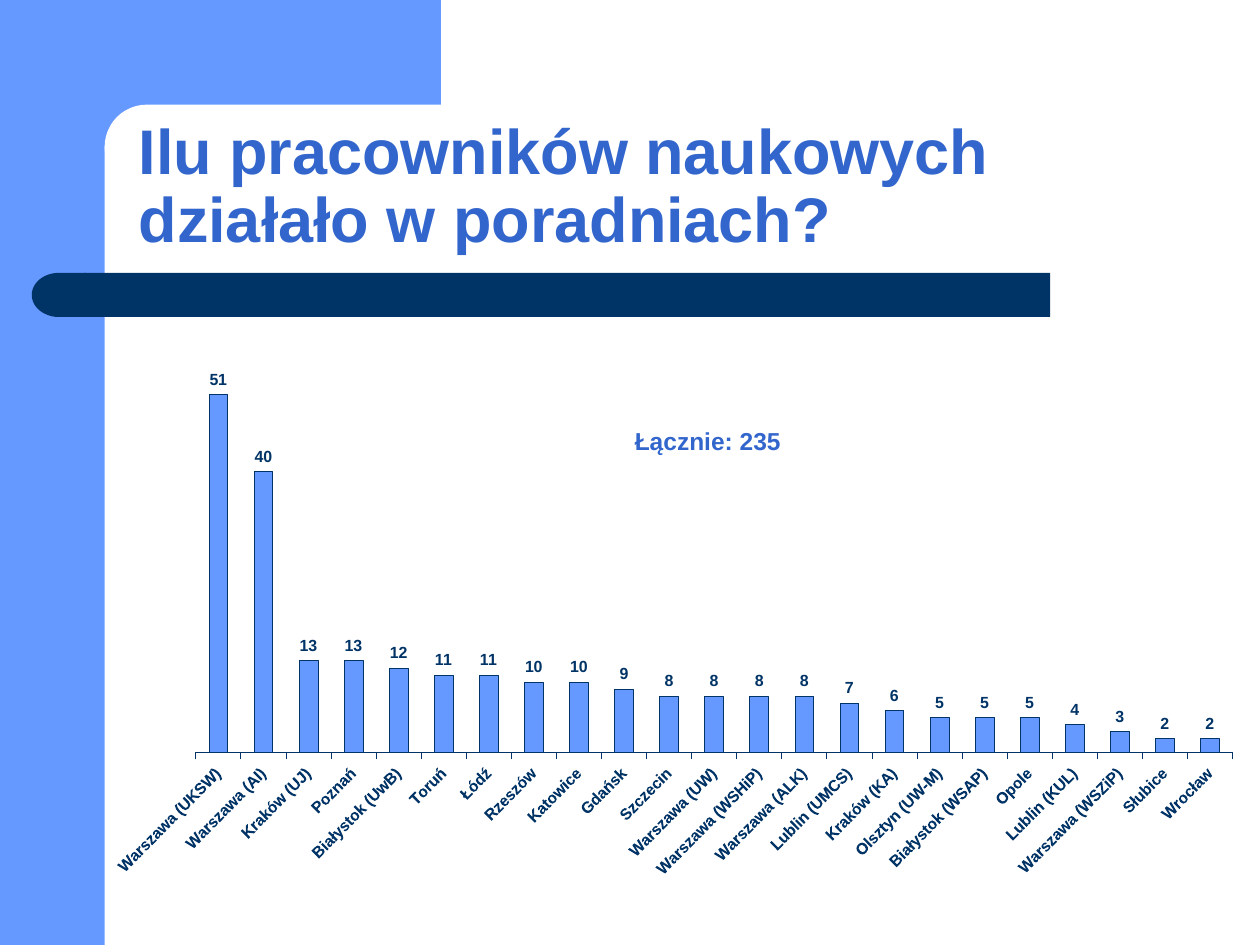
"""Build the slide on academic staff working in legal clinics."""
from dataclasses import dataclass
from typing import Optional

import lxml.etree
import pptx
import pptx.chart.data
import pptx.dml.color
import pptx.enum.chart
import pptx.enum.shapes
import pptx.enum.text
import pptx.oxml
import pptx.oxml.ns
import pptx.util

Cm, Pt = pptx.util.Cm, pptx.util.Pt
MSO_SHAPE = pptx.enum.shapes.MSO_SHAPE
NAVY, BLUE, SKY, WHITE = "003366", "3366CC", "6699FF", "FFFFFF"
FONT = "Arial"


@dataclass
class Panel:
    """A filled decorative shape, with lengths in centimetres."""
    kind: MSO_SHAPE
    left: float
    top: float
    width: float
    height: float
    color: str
    corner: Optional[float] = None
    rotation: float = 0


PANELS = [
    Panel(MSO_SHAPE.RECTANGLE, 0, 0, 2.11, 19.05, SKY),
    Panel(MSO_SHAPE.RECTANGLE, 1.9, 0, 6.99, 2.96, SKY),
    Panel(MSO_SHAPE.ROUNDED_RECTANGLE, 2.11, 2.11, 14.17, 1.7, WHITE, corner=0.5),
    Panel(MSO_SHAPE.ROUNDED_RECTANGLE, 1.7, 5.5, 19.47, 0.89, NAVY, corner=0),
    Panel(MSO_SHAPE.FLOWCHART_DELAY, 0.64, 5.5, 1.09, 0.89, NAVY, rotation=180),
]

STAFF = {
    "Warszawa (UKSW)": 51, "Warszawa (AI)": 40, "Kraków (UJ)": 13, "Poznań": 13,
    "Białystok (UwB)": 12, "Toruń": 11, "Łódź": 11, "Rzeszów": 10, "Katowice": 10,
    "Gdańsk": 9, "Szczecin": 8, "Warszawa (UW)": 8, "Warszawa (WSHiP)": 8,
    "Warszawa (ALK)": 8, "Lublin (UMCS)": 7, "Kraków (KA)": 6, "Olsztyn (UW-M)": 5,
    "Białystok (WSAP)": 5, "Opole": 5, "Lublin (KUL)": 4, "Warszawa (WSZiP)": 3,
    "Słubice": 2, "Wrocław": 2,
}


def rgb(color: str) -> pptx.dml.color.RGBColor:
    """Turn a hex string into a colour."""
    return pptx.dml.color.RGBColor.from_string(color)


def style_font(font, size: float, color: str) -> None:
    """Apply the bold slide font."""
    font.name, font.size, font.bold = FONT, Pt(size), True
    font.color.rgb = rgb(color)


def style_line(line, width: float) -> None:
    """Give a line the navy colour and a width in points."""
    line.color.rgb = rgb(NAVY)
    line.width = Pt(width)


def draw_panel(s, panel: Panel) -> None:
    """Draw one decorative shape."""
    sp = s.shapes.add_shape(panel.kind, Cm(panel.left), Cm(panel.top),
                            Cm(panel.width), Cm(panel.height))
    sp.shadow.inherit = False
    sp.fill.solid()
    sp.fill.fore_color.rgb = rgb(panel.color)
    sp.line.fill.background()
    sp.rotation = panel.rotation
    if panel.corner is not None:
        sp.adjustments[0] = panel.corner


def draw_title(s, text: str) -> None:
    """Place the title above the decoration and format it."""
    sp = s.shapes.title
    sp.element.getparent().append(sp.element)
    sp.left, sp.top, sp.width, sp.height = Cm(2.54), Cm(2.11), Cm(22.23), Cm(3.18)
    tf = sp.text_frame
    tf.text = text
    tf.word_wrap = True
    tf.auto_size = pptx.enum.text.MSO_AUTO_SIZE.NONE
    tf.vertical_anchor = pptx.enum.text.MSO_ANCHOR.BOTTOM
    p = tf.paragraphs[0]
    p.alignment = pptx.enum.text.PP_ALIGN.LEFT
    p.line_spacing = 0.9
    for r in p.runs:
        style_font(r.font, 36, BLUE)


def set_plot_layout(chart, x: float, y: float, w: float, h: float) -> None:
    """Fix the inner plot area as fractions of the chart."""
    plot_area = chart.plots[0]._element.getparent()
    for old in plot_area.findall(pptx.oxml.ns.qn("c:layout")):
        plot_area.remove(old)
    layout = pptx.oxml.parse_xml(f"<c:layout {pptx.oxml.ns.nsdecls('c')}><c:manualLayout/></c:layout>")
    settings = {"layoutTarget": "inner", "xMode": "edge", "yMode": "edge",
                "x": x, "y": y, "w": w, "h": h}
    for name, value in settings.items():
        lxml.etree.SubElement(layout[0], pptx.oxml.ns.qn(f"c:{name}"), val=str(value))
    plot_area.insert(0, layout)


def draw_chart(s) -> None:
    """Draw the column chart of staff per clinic."""
    data = pptx.chart.data.CategoryChartData()
    data.categories = list(STAFF)
    data.add_series("Series 1", list(STAFF.values()))
    chart = s.shapes.add_chart(pptx.enum.chart.XL_CHART_TYPE.COLUMN_CLUSTERED,
                               Cm(2.31), Cm(4.55), Cm(22.76), Cm(14.15), data).chart
    chart.has_legend = chart.has_title = False
    style_font(chart.font, 9.2, NAVY)
    set_plot_layout(chart, 0.06, 0.15, 0.93, 0.6)

    plot = chart.plots[0]
    plot.gap_width = 140
    plot.vary_by_categories = False
    bars = plot.series[0]
    bars.format.fill.solid()
    bars.format.fill.fore_color.rgb = rgb(SKY)
    style_line(bars.format.line, 0.25)
    plot.has_data_labels = True
    labels = plot.data_labels
    labels.show_value = True
    labels.position = pptx.enum.chart.XL_LABEL_POSITION.OUTSIDE_END
    style_font(labels.font, 9.2, NAVY)

    values = chart.value_axis
    values.minimum_scale, values.maximum_scale = 0, 60
    values.has_major_gridlines = False
    values.visible = False

    clinics = chart.category_axis
    clinics.major_tick_mark = pptx.enum.chart.XL_TICK_MARK.OUTSIDE
    style_line(clinics.format.line, 0.29)
    style_font(clinics.tick_labels.font, 9.2, NAVY)
    body = clinics._element.find(pptx.oxml.ns.qn("c:txPr")).find(pptx.oxml.ns.qn("a:bodyPr"))
    body.set("rot", "-2700000")
    body.set("vert", "horz")


def draw_total(s, text: str) -> None:
    """Write the total over the chart."""
    tf = s.shapes.add_textbox(Cm(9.04), Cm(8.46), Cm(10.46), Cm(0.85)).text_frame
    tf.word_wrap = True
    tf.auto_size = pptx.enum.text.MSO_AUTO_SIZE.SHAPE_TO_FIT_TEXT
    tf.text = text
    p = tf.paragraphs[0]
    p.alignment = pptx.enum.text.PP_ALIGN.CENTER
    p.space_before = Pt(7)
    style_font(p.runs[0].font, 14, BLUE)


def main() -> None:
    """Build and save the presentation."""
    prs = pptx.Presentation()
    prs.slide_width, prs.slide_height = Cm(25.4), Cm(19.05)
    s = prs.slides.add_slide(prs.slide_layouts[5])
    for panel in PANELS:
        draw_panel(s, panel)
    draw_title(s, "Ilu pracowników naukowych \vdziałało w poradniach?")
    draw_chart(s)
    draw_total(s, "Łącznie: 235")
    prs.save("out.pptx")


if __name__ == "__main__":
    main()
